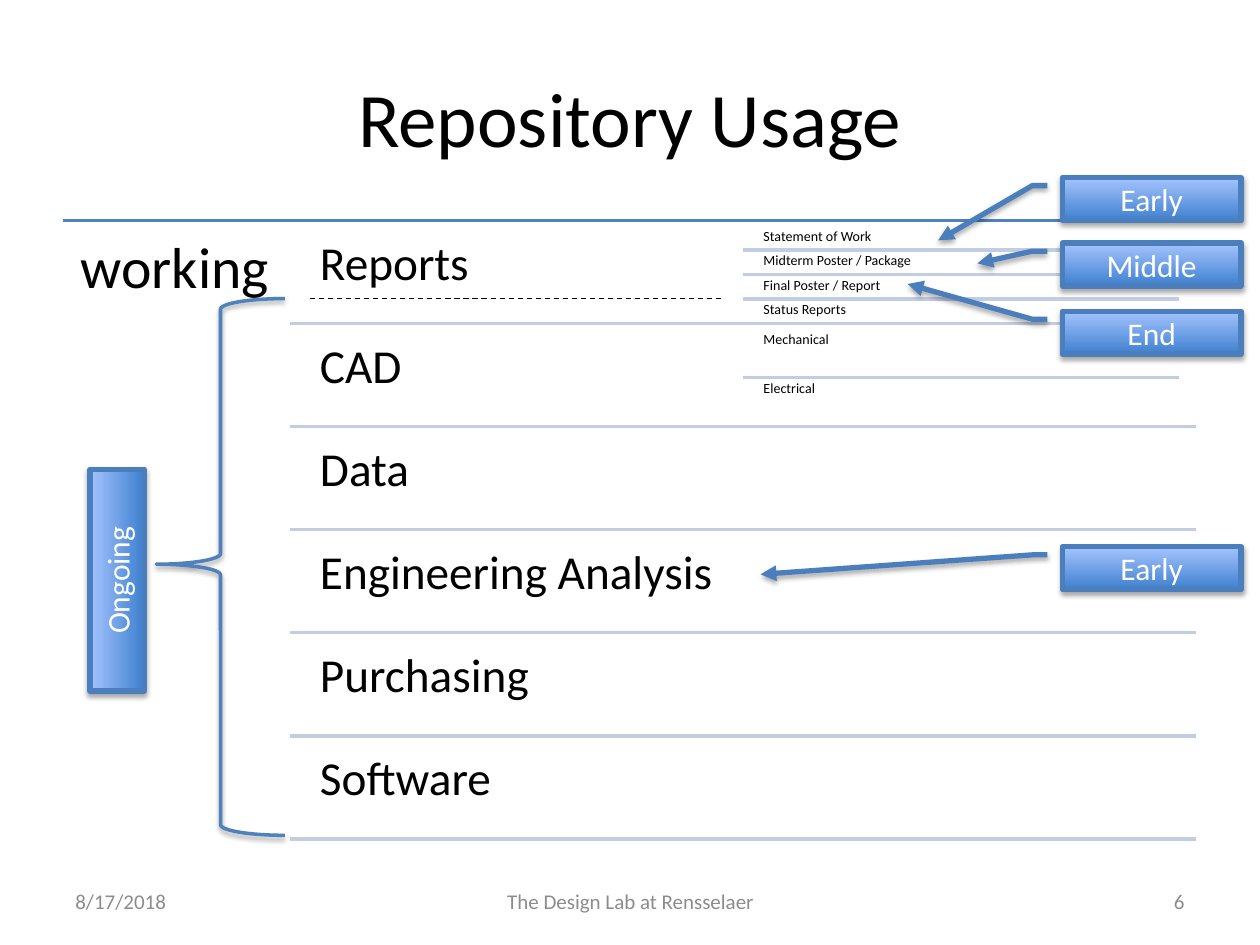
from lxml import etree
from pptx import Presentation
from pptx.dml.color import RGBColor
from pptx.enum import dml, shapes, text
from pptx.oxml import ns
from pptx.util import Inches, Pt

COLORS = {"text": "000000", "muted": "8C8C8C", "white": "FFFFFF", "accent": "4F81BD",
          "rule": "C2CDE1", "edge": "4B7EBC", "dark": "3F80CE", "light": "A4C4FF"}
LEFT, CENTER, RIGHT = text.PP_ALIGN.LEFT, text.PP_ALIGN.CENTER, text.PP_ALIGN.RIGHT
TOP, MIDDLE = text.MSO_ANCHOR.TOP, text.MSO_ANCHOR.MIDDLE

FOLDERS = [
    ("Reports", ["Statement of Work", "Midterm Poster / Package",
                 "Final Poster / Report", "Status Reports"]),
    ("CAD", ["Mechanical", "Electrical"]),
    ("Data", []),
    ("Engineering Analysis", []),
    ("Purchasing", []),
    ("Software", []),
]
# label, top, pointer tip (y, x) as a share of the callout's size
CALLOUTS = [("Early", 1.41, 1.465, -0.693), ("Middle", 1.93, 0.473, -0.474),
            ("End", 2.47, -0.634, -0.864), ("Early", 4.34, 0.643, -1.686)]
FOOTERS = [("8/17/2018", 0.5, 2.33, LEFT),
           ("The Design Lab at Rensselaer", 3.42, 3.17, CENTER),
           ("6", 7.17, 2.33, RIGHT)]
TREE_TOP, ROW, GAP = 1.75, 0.818, 0.04


def rgb(name):
    return RGBColor.from_string(COLORS[name])


def write(sp, content, size=18, color="text", align=LEFT, anchor=TOP, inset=None, spacing=None):
    tf = sp.text_frame
    tf.word_wrap = True
    tf.vertical_anchor = anchor
    if inset is not None:
        tf.margin_left = tf.margin_right = tf.margin_top = tf.margin_bottom = Inches(inset)
    p = tf.paragraphs[0]
    p.alignment = align
    if spacing:
        p.line_spacing = spacing
    r = p.add_run()
    r.text = content
    r.font.name = "Calibri"
    r.font.size = Pt(size)
    r.font.color.rgb = rgb(color)


class Deck:
    """Holds the presentation, its shared style and the current slide."""

    def __init__(self):
        self.prs = Presentation()
        self.prs.slide_width, self.prs.slide_height = Inches(10), Inches(7.5)
        self.s = self.prs.slides.add_slide(self.prs.slide_layouts[6])

    def label(self, content, x, y, w, h, **fmt):
        sp = self.s.shapes.add_textbox(Inches(x), Inches(y), Inches(w), Inches(h))
        write(sp, content, **fmt)

    def rule(self, x1, x2, y, color="rule", width=2, dash=None):
        ln = self.s.shapes.add_connector(shapes.MSO_CONNECTOR.STRAIGHT,
                                         Inches(x1), Inches(y), Inches(x2), Inches(y))
        ln.line.color.rgb = rgb(color)
        ln.line.width = Pt(width)
        if dash:
            ln.line.dash_style = dash
        etree.SubElement(ln._element.spPr, ns.qn("a:effectLst"))

    def shape(self, kind, x, y, w, h, color, width, adjust=()):
        """Add an outlined preset shape with a soft shadow below it."""
        sp = self.s.shapes.add_shape(kind, Inches(x), Inches(y), Inches(w), Inches(h))
        for i, value in enumerate(adjust):
            sp.adjustments[i] = value
        sp.line.color.rgb = rgb(color)
        sp.line.width = Pt(width)
        sp.shadow.inherit = False
        effects = sp._element.spPr.find(ns.qn("a:effectLst"))
        shadow = etree.SubElement(effects, ns.qn("a:outerShdw"), blurRad=str(Pt(3.1)),
                                  dist=str(Pt(1.8)), dir="5400000", rotWithShape="0")
        black = etree.SubElement(shadow, ns.qn("a:srgbClr"), val=COLORS["text"])
        etree.SubElement(black, ns.qn("a:alpha"), val="35000")
        return sp

    def button(self, kind, content, x, y, w, h, adjust=()):
        sp = self.shape(kind, x, y, w, h, "edge", 3, adjust)
        sp.fill.gradient()
        sp.fill.gradient_angle = 90
        for stop, name in zip(sp.fill.gradient_stops, ("dark", "light")):
            stop.color.rgb = rgb(name)
        write(sp, content, color="white", align=CENTER, anchor=MIDDLE)
        return sp

    def callout(self, content, y, tip_y, tip_x):
        sp = self.button(shapes.MSO_SHAPE.LINE_CALLOUT_2, content, 8.43, y, 1.42, 0.34,
                         (0.188, -0.083, 0.188, -0.167, tip_y, tip_x))
        etree.SubElement(sp.line._get_or_add_ln(), ns.qn("a:tailEnd"), type="triangle")

    def folder(self, name, files, top):
        """Draw one row of the tree, its files sharing the row's height."""
        self.label(name, 2.43, top + GAP, 3.46, ROW - GAP, size=27, inset=0.11, spacing=0.9)
        for i, item in enumerate(files):
            step = (ROW - GAP) / len(files)
            y = top + GAP + i * step
            self.label(item, 6.03, y, 3.46, step, size=8, inset=0.03, spacing=0.9)
            if i:
                self.rule(5.9, 9.36, y)
        self.rule(2.3, 9.49, top + ROW)


def main():
    d = Deck()
    d.label("Repository Usage", 0.5, 0.3, 9, 1.25, size=44, align=CENTER, anchor=MIDDLE)

    d.rule(0.5, 9.5, TREE_TOP, color="accent")
    d.label("working", 0.5, TREE_TOP, 1.8, 4.95, size=33, inset=0.14, spacing=0.9)
    for i, (name, files) in enumerate(FOLDERS):
        d.folder(name, files, TREE_TOP + i * ROW)

    for content, x, w, align in FOOTERS:
        d.label(content, x, 6.95, w, 0.4, size=12, color="muted", align=align, anchor=MIDDLE)

    for callout in CALLOUTS:
        d.callout(*callout)
    brace = d.shape(shapes.MSO_SHAPE.LEFT_BRACE, 1.24, 2.37, 1.02, 4.26, "accent", 2,
                    (0.083, 0.495))
    brace.fill.background()
    ongoing = d.button(shapes.MSO_SHAPE.RECTANGLE, "Ongoing", 0.05, 4.39, 1.76, 0.43)
    ongoing.rotation = 270
    d.rule(2.46, 5.75, 2.37, color="text", width=0.75, dash=dml.MSO_LINE.DASH)

    d.prs.save("out.pptx")


if __name__ == "__main__":
    main()
